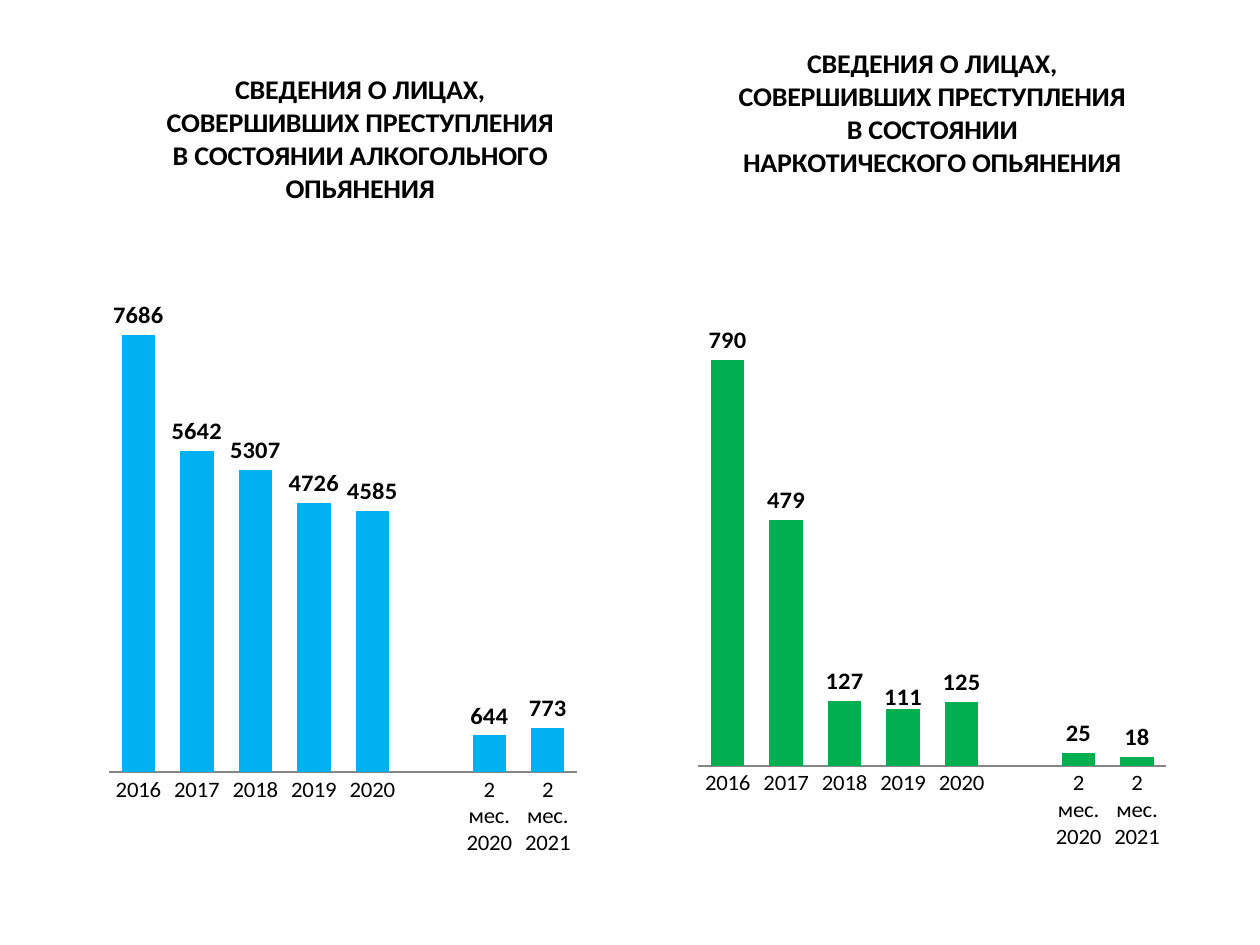
import pptx
import pptx.util
import pptx.chart.data
import pptx.dml.color
import pptx.enum.chart
import pptx.enum.text
import pptx.oxml

Pt = pptx.util.Pt
ENUM = pptx.enum.chart
FACE = "Calibri"
HUES = {"text": "000000", "axis": "868686", "blue": "00B0F0", "green": "00B050"}
CATS = ["2016", "2017", "2018", "2019", "2020", "", "2 мес. 2020", "2 мес. 2021"]
HEAD = "СВЕДЕНИЯ О ЛИЦАХ, СОВЕРШИВШИХ ПРЕСТУПЛЕНИЯ\nВ СОСТОЯНИИ {} ОПЬЯНЕНИЯ"


def color(name):
    return pptx.dml.color.RGBColor.from_string(HUES[name])


def style(font, size, bold=False, hue="text"):
    font.name, font.size, font.bold = FACE, Pt(size), bold
    font.color.rgb = color(hue)


def write(frame, text, size=16, bold=True, hue="text"):
    frame.text = text
    for para in frame.paragraphs:
        para.alignment = pptx.enum.text.PP_ALIGN.CENTER
        for run in para.runs:
            style(run.font, size, bold, hue)


def layout(after, **spots):
    """Put a manual layout after a chart element; spots are fractions."""
    space = 'xmlns:c="http://schemas.openxmlformats.org/drawingml/2006/chart"'
    parts = "".join(f'<c:{key} val="{val}"/>' for key, val in spots.items())
    after.addnext(pptx.oxml.parse_xml(
        f"<c:layout {space}><c:manualLayout>{parts}</c:manualLayout></c:layout>"))


def panel(slide, box, kind, vals, hue, top, head, area):
    data = pptx.chart.data.CategoryChartData()
    data.categories = CATS
    data.add_series("Series 1", vals)
    chart = slide.shapes.add_chart(
        ENUM.XL_CHART_TYPE.COLUMN_CLUSTERED, *map(Pt, box), data).chart
    style(chart.font, 18)
    chart.has_legend = False

    # Title
    title = chart.chart_title
    write(title.text_frame, HEAD.format(kind))
    root = title._element
    for old in root.xpath("c:layout"):
        root.remove(old)
    layout(root.xpath("c:tx")[0], xMode="edge", yMode="edge", x=head[0], y=head[1])

    # Plot area
    field = chart._chartSpace.xpath(".//c:plotArea")[0]
    for old in field.xpath("c:layout"):
        field.remove(old)
    left, upper, wide, high = area
    layout(field[0], layoutTarget="inner", xMode="edge", yMode="edge",
           x=left, y=upper, w=wide, h=high)
    field.insert(0, field.xpath("c:layout")[0])

    # Axes
    axis = chart.category_axis
    axis.major_tick_mark = ENUM.XL_TICK_MARK.NONE
    style(axis.tick_labels.font, 13)
    axis.format.line.color.rgb = color("axis")
    axis.format.line.width = Pt(0.75)
    scale = chart.value_axis
    scale.visible = scale.has_major_gridlines = False
    scale.minimum_scale, scale.maximum_scale = 0, top

    # Columns and labels
    plot = chart.plots[0]
    plot.gap_width, plot.vary_by_categories = 75, False
    bars = plot.series[0]
    bars.format.fill.solid()
    bars.format.fill.fore_color.rgb = color(hue)
    tags = bars.data_labels
    tags.show_value = True
    tags.position = ENUM.XL_LABEL_POSITION.OUTSIDE_END
    style(tags.font, 14, True)
    return bars


def lower(bars, index, shift):
    """Move one value label down by a fraction of the chart's height."""
    tag = bars.points[index].data_label
    style(tag.font, 14, True)
    tag.position = ENUM.XL_LABEL_POSITION.OUTSIDE_END
    layout(bars._element.xpath(".//c:dLbl/c:idx")[0], x=0, y=shift)


def main():
    deck = pptx.Presentation()
    deck.slide_width, deck.slide_height = Pt(720), Pt(540)
    slide = deck.slides.add_slide(deck.slide_layouts[6])

    panel(slide, (58.3, 20.9, 289.4, 468.7), "АЛКОГОЛЬНОГО",
          (7686, 5642, 5307, 4726, 4585, None, 644, 773), "blue", 9000,
          (0.12, 0.04), (0.014, 0.282, 0.924, 0.646))
    drugs = panel(slide, (388.1, 15.1, 289.4, 470.9), "НАРКОТИЧЕСКОГО",
                  (790, 479, 127, 111, 125, None, 25, 18), "green", 900,
                  (0.11, 0.02), (0.038, 0.349, 0.924, 0.582))
    lower(drugs, 3, 0.01)
    deck.save("out.pptx")


if __name__ == "__main__":
    main()
